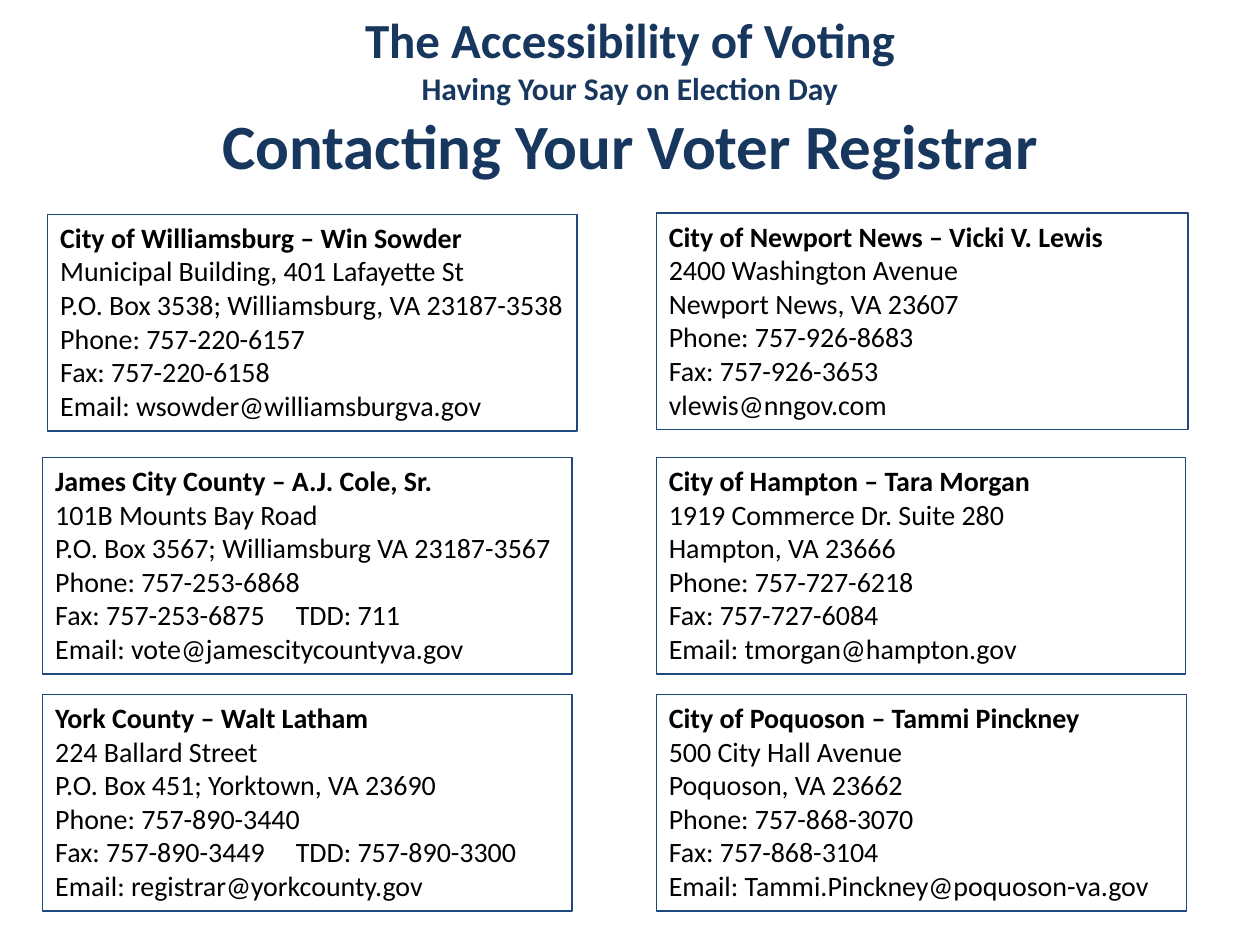
from dataclasses import dataclass

from lxml import etree
from pptx import Presentation
from pptx.dml.color import RGBColor
from pptx.enum.shapes import MSO_SHAPE
from pptx.enum.text import MSO_ANCHOR, MSO_AUTO_SIZE, PP_ALIGN
from pptx.oxml.ns import qn
from pptx.util import Inches, Pt

RECT = MSO_SHAPE.RECTANGLE
TOP = MSO_ANCHOR.TOP
GROW = MSO_AUTO_SIZE.SHAPE_TO_FIT_TEXT
LEFT, CENTER = PP_ALIGN.LEFT, PP_ALIGN.CENTER

WIDTH, HEIGHT = Inches(10), Inches(7.5)
COLUMNS = (0.34, 5.21)
ROWS = (1.7, 3.63, 5.51)
CARD_HEIGHT = 1.72
TDD_STOP = Inches(1.91)
FRAME = {"word_wrap": True, "auto_size": GROW, "vertical_anchor": TOP}


@dataclass
class Line:
    text: str
    size: int = 16
    bold: bool = False
    color: str = "000000"
    align: PP_ALIGN = LEFT


@dataclass
class Registrar:
    col: int
    row: int
    heading: str
    details: tuple[str, ...]
    dx: float = 0
    dy: float = 0
    width: float = 4.2


TITLES = [
    Line(text, size, True, "17375E", CENTER)
    for text, size in (
        ("The Accessibility of Voting", 28),
        ("Having Your Say on Election Day", 18),
        ("Contacting Your Voter Registrar", 36),
    )
]

REGISTRARS = [
    Registrar(0, 0, "City of Williamsburg – Win Sowder", (
        "Municipal Building, 401 Lafayette St",
        "P.O. Box 3538; Williamsburg, VA 23187-3538",
        "Phone: 757-220-6157",
        "Fax: 757-220-6158",
        "Email: wsowder@williamsburgva.gov",
    ), dx=0.04),
    Registrar(0, 1, "James City County – A.J. Cole, Sr.", (
        "101B Mounts Bay Road",
        "P.O. Box 3567; Williamsburg VA 23187-3567",
        "Phone: 757-253-6868",
        "Fax: 757-253-6875\tTDD: 711",
        "Email: vote@jamescitycountyva.gov",
    )),
    Registrar(0, 2, "York County – Walt Latham", (
        "224 Ballard Street",
        "P.O. Box 451; Yorktown, VA 23690",
        "Phone: 757-890-3440",
        "Fax: 757-890-3449\tTDD: 757-890-3300",
        "Email: registrar@yorkcounty.gov",
    )),
    Registrar(1, 0, "City of Newport News – Vicki V. Lewis", (
        "2400 Washington Avenue",
        "Newport News, VA 23607",
        "Phone: 757-926-8683",
        "Fax: 757-926-3653",
        "vlewis@nngov.com",
    ), dy=-0.01, width=4.22),
    Registrar(1, 1, "City of Hampton – Tara Morgan", (
        "1919 Commerce Dr. Suite 280",
        "Hampton, VA 23666",
        "Phone: 757-727-6218",
        "Fax: 757-727-6084",
        "Email: tmorgan@hampton.gov",
    )),
    Registrar(1, 2, "City of Poquoson – Tammi Pinckney", (
        "500 City Hall Avenue",
        "Poquoson, VA 23662",
        "Phone: 757-868-3070",
        "Fax: 757-868-3104",
        "Email: Tammi.Pinckney@poquoson-va.gov",
    ), width=4.21),
]


def rgb(value: str) -> RGBColor:
    return RGBColor.from_string(value)


def add_tab_stop(p, position: int) -> None:
    tabs = etree.SubElement(p._p.get_or_add_pPr(), qn("a:tabLst"))
    etree.SubElement(tabs, qn("a:tab"), pos=str(int(position)), algn="l")


def write_lines(tf, lines: list[Line]) -> None:
    for name, value in FRAME.items():
        setattr(tf, name, value)
    for i, line in enumerate(lines):
        p = tf.add_paragraph() if i else tf.paragraphs[0]
        p.alignment = line.align
        if "\t" in line.text:
            add_tab_stop(p, TDD_STOP)
        r = p.add_run()
        r.text = line.text
        font = {"name": "Calibri", "size": Pt(line.size), "bold": line.bold}
        for name, value in font.items():
            setattr(r.font, name, value)
        r.font.color.rgb = rgb(line.color)


def draw_registrar(s, card: Registrar) -> None:
    sp = s.shapes.add_shape(
        RECT,
        Inches(COLUMNS[card.col] + card.dx),
        Inches(ROWS[card.row] + card.dy),
        Inches(card.width),
        Inches(CARD_HEIGHT),
    )
    sp.shadow.inherit = False
    sp.fill.background()
    sp.line.color.rgb = rgb("1F497D")
    sp.line.width = Pt(0.75)
    lines = [Line(card.heading, bold=True), *map(Line, card.details)]
    write_lines(sp.text_frame, lines)


def draw_title(s) -> None:
    sp = s.shapes.add_textbox(0, Inches(0.03), WIDTH, Inches(1.48))
    write_lines(sp.text_frame, TITLES)


def main() -> None:
    prs = Presentation()
    prs.slide_width, prs.slide_height = WIDTH, HEIGHT
    s = prs.slides.add_slide(prs.slide_layouts[6])
    for card in REGISTRARS:
        draw_registrar(s, card)
    draw_title(s)
    prs.save("out.pptx")


if __name__ == "__main__":
    main()
